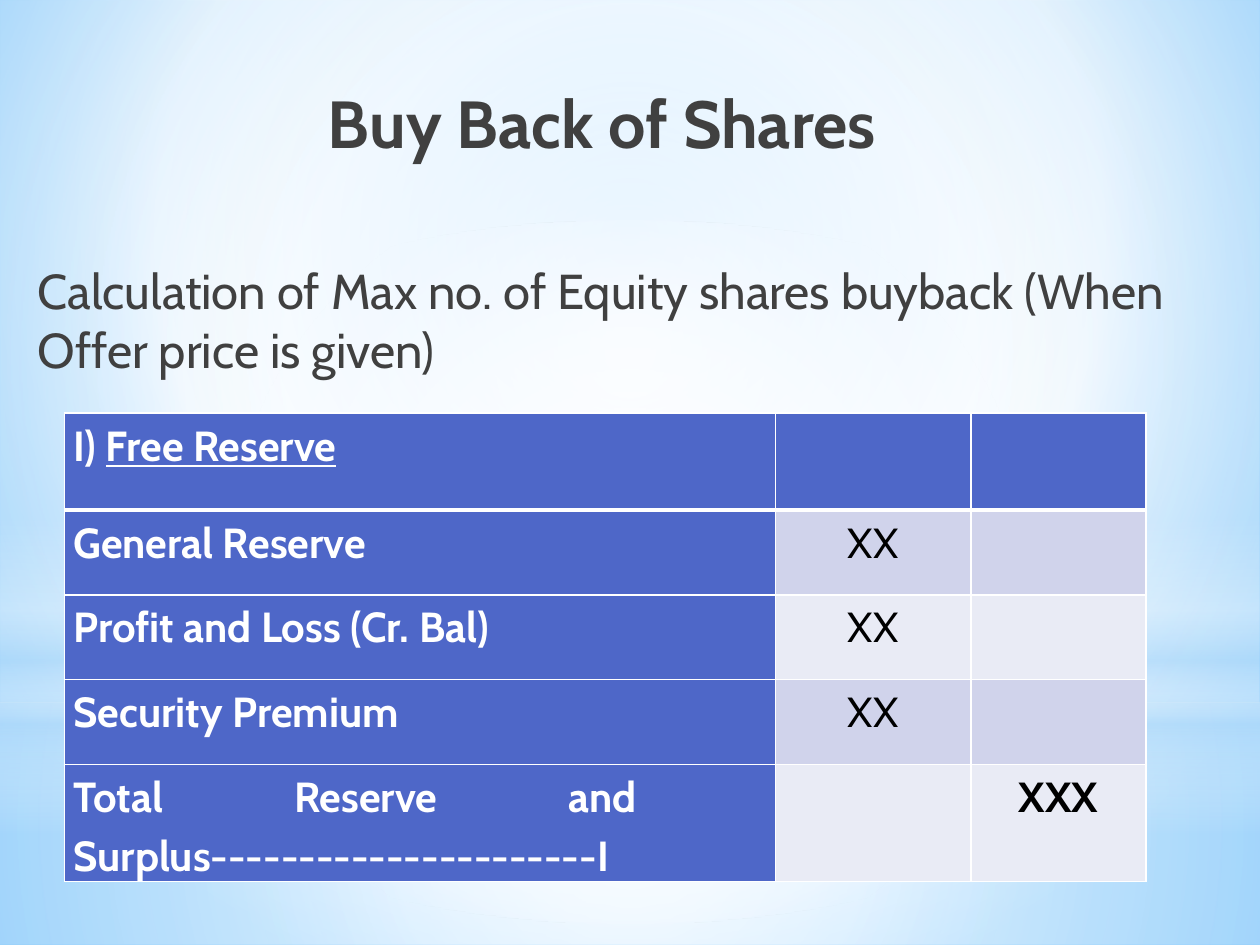
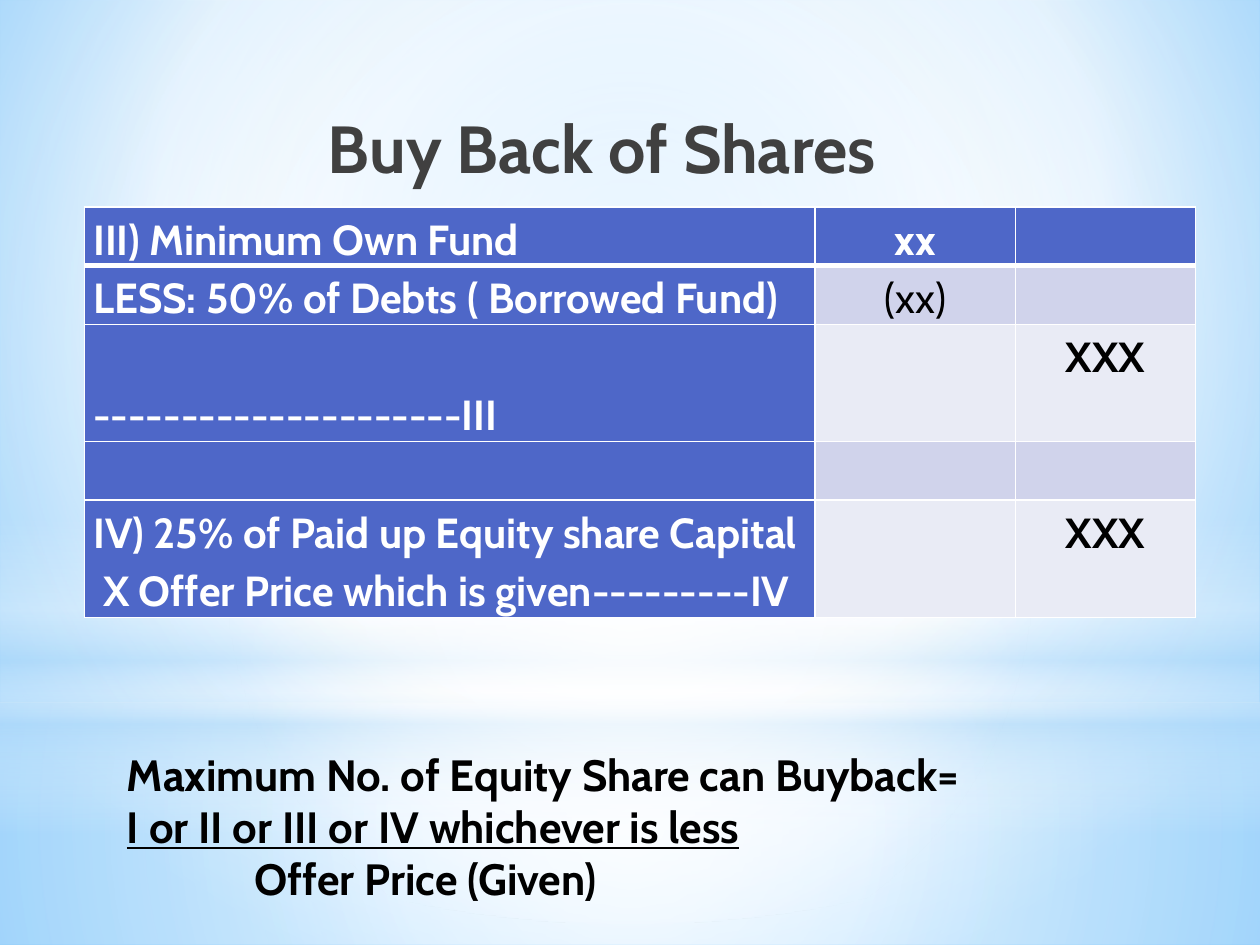
from pptx import Presentation
from pptx.dml.color import RGBColor
from pptx.enum.shapes import MSO_SHAPE
from pptx.enum.text import MSO_ANCHOR, PP_ALIGN
from pptx.oxml import parse_xml
from pptx.oxml.ns import nsdecls, qn
from pptx.util import Cm, Pt

RECTANGLE, OVAL = MSO_SHAPE.RECTANGLE, MSO_SHAPE.OVAL
TOP, BOTTOM = MSO_ANCHOR.TOP, MSO_ANCHOR.BOTTOM
LEFT, CENTER, JUSTIFY = PP_ALIGN.LEFT, PP_ALIGN.CENTER, PP_ALIGN.JUSTIFY


class Theme:
    font = "Cabin"
    white, black, heading = "FFFFFF", "000000", "404040"
    blue, band_dark, band_light = "4E67C8", "D0D3EB", "E9EBF5"
    sky, haze, deep_sky = "9ED5FF", "B4DCFA", "5BB9FF"
    title_size, lead_size, formula_size, table_size = 38, 28, 25, 24
    thin_line, thick_line = Pt(1), Pt(3)


def paint_gradient(fill, holder, stops, focus=None):
    """Stops are (position, colour, opacity) in percent; without a focus the gradient runs downwards."""
    fill.solid()
    stop_xml = "".join(
        f'<a:gs pos="{position * 1000}"><a:srgbClr val="{color}">'
        f'<a:alpha val="{opacity * 1000}"/></a:srgbClr></a:gs>'
        for position, color, opacity in stops)
    if focus:
        left, top, right, bottom = (edge * 1000 for edge in focus)
        direction = (f'<a:path path="circle"><a:fillToRect l="{left}" t="{top}" '
                     f'r="{right}" b="{bottom}"/></a:path>')
    else:
        direction = '<a:lin ang="5400000" scaled="0"/>'
    solid = next(holder.iter(qn("a:solidFill")))
    solid.getparent().replace(solid, parse_xml(
        f'<a:gradFill {nsdecls("a")} rotWithShape="1"><a:gsLst>{stop_xml}</a:gsLst>'
        f'{direction}</a:gradFill>'))


def write(para, text, size, color, bold=False, align=LEFT):
    para.text = text
    para.alignment = align
    para.font.name = Theme.font
    para.font.size = Pt(size)
    para.font.bold = bold
    para.font.color.rgb = RGBColor.from_string(color)


deck = Presentation()
deck.slide_width, deck.slide_height = Cm(25.4), Cm(19.05)
slides = [deck.slides.add_slide(deck.slide_layouts[5]) for _ in range(2)]
reserve_slide, limit_slide = slides

# Shared background: sky gradient with soft light bands on the master
master = deck.slide_master
middle = (50, 50, 50, 50)
paint_gradient(master.background.fill, master.element,
               [(0, Theme.sky, 100), (60, Theme.white, 100), (100, Theme.deep_sky, 100)],
               (20, 10, 20, 60))
light_bands = [
    (RECTANGLE, 14.17, 4.88, middle,
     [(0, Theme.white, 91), (37, Theme.white, 76), (100, Theme.haze, 79)]),
    (RECTANGLE, 0, 14.17, middle,
     [(0, Theme.white, 89), (48, Theme.white, 62), (100, Theme.haze, 79)]),
    (RECTANGLE, 10.46, 6.35, None,
     [(0, Theme.white, 0), (29, Theme.white, 30), (45, Theme.haze, 40),
      (55, Theme.white, 26), (65, Theme.haze, 60), (100, Theme.white, 0)]),
    (OVAL, 4.45, 14.17, middle, [(0, Theme.white, 100), (56, Theme.white, 0)]),
]
for number, (outline, top, height, focus, stops) in enumerate(light_bands):
    band = reserve_slide.shapes.add_shape(outline, 0, Cm(top), deck.slide_width, Cm(height))
    band.shadow.inherit = False
    paint_gradient(band.fill, band.element, stops, focus)
    band.line.fill.background()
    band.element.nvSpPr.cNvPr.set("id", str(100 + number))
    master.shapes.element.insert(2 + number, band.element)

# Titles
for slide, top, height in [(reserve_slide, 1.52, 2.21), (limit_slide, 2.03, 1.9)]:
    title = slide.shapes.title
    title.left, title.top, title.width, title.height = Cm(3.18), Cm(top), Cm(17.78), Cm(height)
    title.text_frame.vertical_anchor = TOP
    title.text_frame.word_wrap = True
    para = title.text_frame.paragraphs[0]
    write(para, "Buy Back of Shares", Theme.title_size, Theme.heading, True, CENTER)
    para.space_before = Pt(2)
    para._p.get_or_add_pPr().set("marL", str(Cm(0.13)))

# Lead sentence
lead = reserve_slide.shapes.add_textbox(Cm(0.51), Cm(5.13), Cm(23.8), Cm(2.7))
lead.text_frame.word_wrap = True
write(lead.text_frame.paragraphs[0],
      "Calculation of Max no. of Equity shares buyback (When Offer price is given)",
      Theme.lead_size, Theme.heading)

# Tables
reserve_rows = [
    (1.95, "I) ", "", ""),
    (1.71, "General Reserve", "XX", ""),
    (1.71, "Profit and Loss (Cr. Bal)", "XX", ""),
    (1.71, "Security Premium", "XX", ""),
    (2.36, "Total Reserve and Surplus----------------------I", "", "XXX"),
]
limit_rows = [
    (1.18, "III) Minimum Own Fund", "xx", ""),
    (1.18, "LESS: 50% of Debts ( Borrowed Fund)", "(xx)", ""),
    (2.36, "---------------------III", "", "XXX"),
    (1.18, "", "", ""),
    (2.36, "IV) 25% of Paid up Equity share Capital", "", "XXX"),
]
tables = []
for slide, left, top, widths, rows in [
        (reserve_slide, 1.3, 8.33, (14.33, 3.94, 3.53), reserve_rows),
        (limit_slide, 1.7, 4.17, (14.73, 4.04, 3.63), limit_rows)]:
    table = slide.shapes.add_table(
        len(rows), len(widths), Cm(left), Cm(top), Cm(sum(widths)),
        Cm(sum(row[0] for row in rows))).table
    table.first_row = table.horz_banding = False
    for column, width in zip(table.columns, widths):
        column.width = Cm(width)
    for row_index, (height, *texts) in enumerate(rows):
        table.rows[row_index].height = Cm(height)
        for column_index, text in enumerate(texts):
            cell = table.cell(row_index, column_index)
            cell.margin_left = cell.margin_right = Cm(0.18)
            cell.margin_top = cell.margin_bottom = 0
            for side in "LRTB":
                under_header = (row_index, side) in [(0, "B"), (1, "T")]
                line = Theme.thick_line if under_header else Theme.thin_line
                cell._tc.get_or_add_tcPr().append(parse_xml(
                    f'<a:ln{side} {nsdecls("a")} w="{line}"><a:solidFill>'
                    f'<a:srgbClr val="{Theme.white}"/></a:solidFill></a:ln{side}>'))
            is_heading = row_index == 0 or column_index == 0
            band_color = Theme.band_dark if row_index % 2 else Theme.band_light
            cell.fill.solid()
            cell.fill.fore_color.rgb = RGBColor.from_string(
                Theme.blue if is_heading else band_color)
            para = cell.text_frame.paragraphs[0]
            write(para, text, Theme.table_size, Theme.white if is_heading else Theme.black,
                  is_heading or text == "XXX", CENTER if column_index else LEFT)
            para.line_spacing = 1.15
    tables.append(table)
reserve_table, limit_table = tables

free_reserve = reserve_table.cell(0, 0).text_frame.paragraphs[0].add_run()
free_reserve.text = "Free Reserve"
free_reserve.font.underline = True

total_cell = reserve_table.cell(4, 0)
total_cell.margin_right = Cm(2.8)
total_cell.text_frame.paragraphs[0].alignment = JUSTIFY

limit_table.cell(2, 0).vertical_anchor = BOTTOM
para = limit_table.cell(4, 0).text_frame.add_paragraph()
write(para, "X Offer Price which is given---------IV", Theme.table_size, Theme.white, True)
para.line_spacing = 1.15
para._p.get_or_add_pPr().set("marL", str(Cm(0.2)))

# Formula: numerator underlined as the fraction line
formula = limit_slide.shapes.add_textbox(Cm(2.31), Cm(14.94), Cm(20.19), Cm(3.45)).text_frame
formula.word_wrap = True
numerator, denominator = formula.add_paragraph(), formula.add_paragraph()
for para, text in [(formula.paragraphs[0], "Maximum No. of Equity Share can Buyback="),
                   (numerator, "I or II or III or IV whichever is less"),
                   (denominator, "Offer Price (Given)")]:
    write(para, text, Theme.formula_size, Theme.black, True)
numerator.font.underline = True
denominator._p.get_or_add_pPr().set("marL", str(Cm(2.58)))

deck.save("out.pptx")
